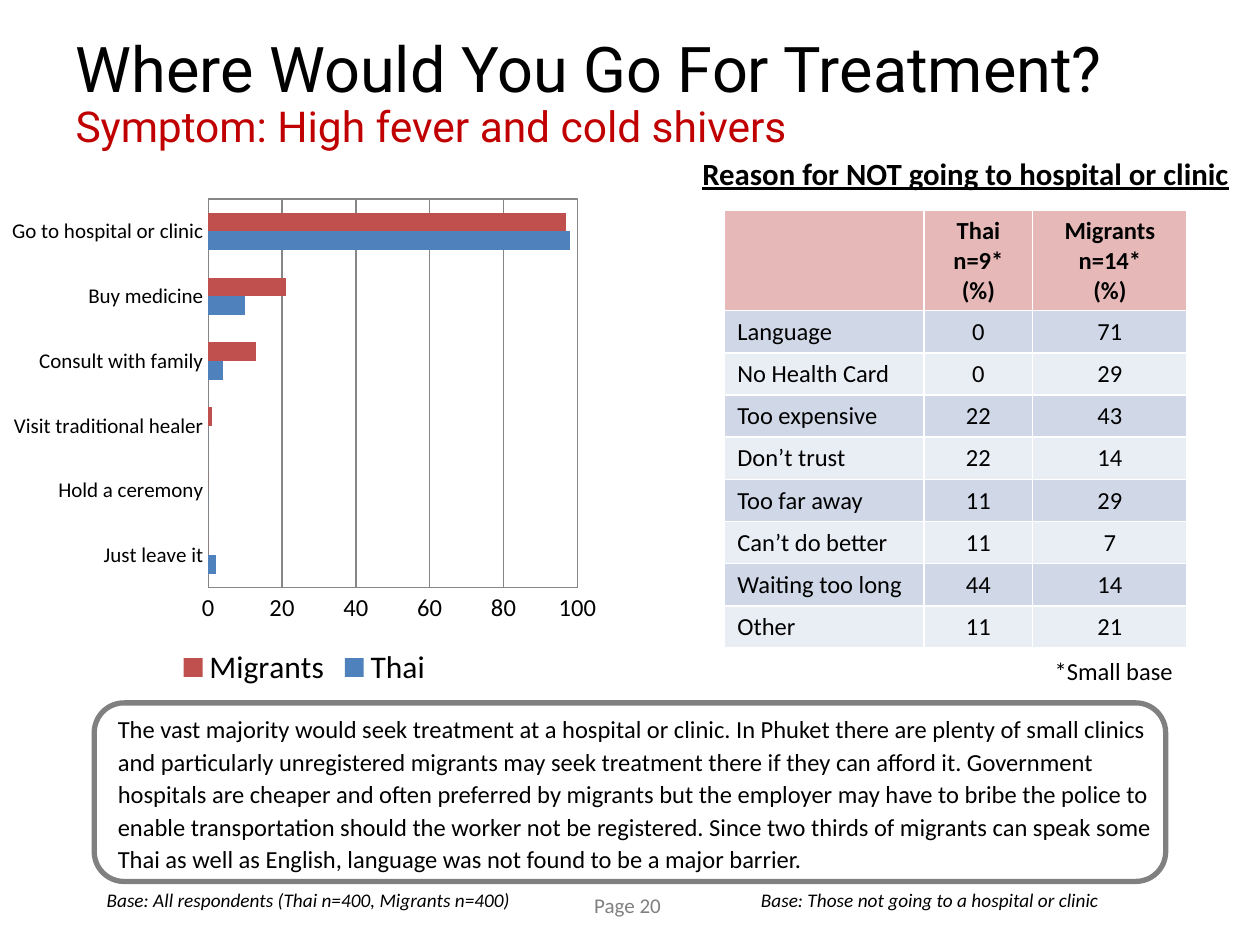
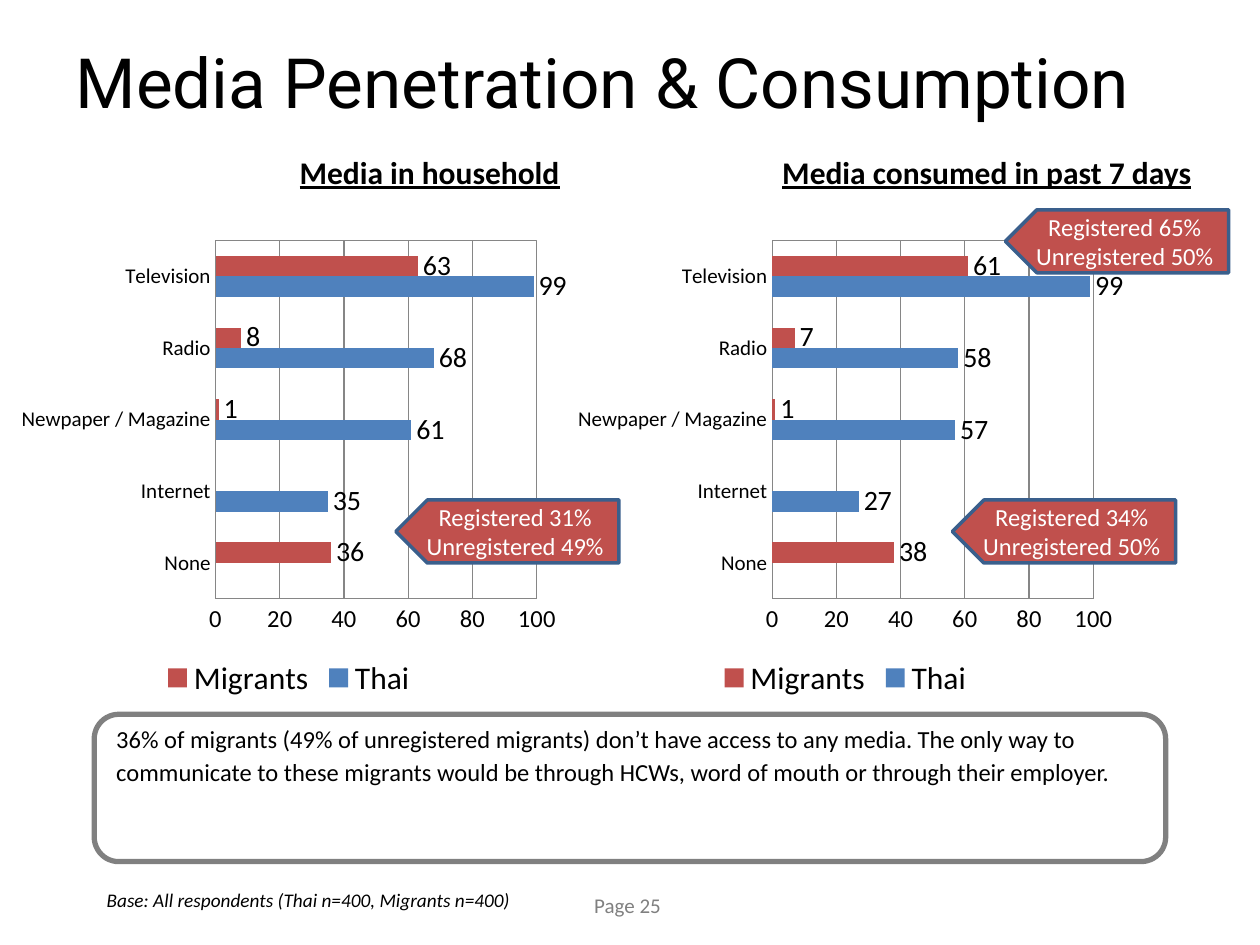
from pptx import Presentation
from pptx.chart.data import CategoryChartData
from pptx.dml.color import RGBColor
from pptx.enum.chart import XL_CHART_TYPE as ChartType, XL_LEGEND_POSITION as LegendPlace
from pptx.enum.chart import XL_TICK_MARK as TickMark
from pptx.enum.shapes import MSO_SHAPE as Preset
from pptx.enum.text import MSO_ANCHOR as Anchor, MSO_AUTO_SIZE as AutoSize, PP_ALIGN as Align
from pptx.oxml import parse_xml
from pptx.oxml.ns import nsdecls
from pptx.util import Cm, Pt

BLACK = RGBColor(0x00, 0x00, 0x00)
WHITE = RGBColor(0xFF, 0xFF, 0xFF)
GREY = RGBColor(0x80, 0x80, 0x80)
GRID = RGBColor(0x86, 0x86, 0x86)
DARK_RED = RGBColor(0xC0, 0x00, 0x00)
MIGRANT_RED = RGBColor(0xC0, 0x50, 0x4D)
CALLOUT_EDGE = RGBColor(0x3A, 0x5F, 0x8C)
HEADER_PINK = RGBColor(0xE6, 0xB9, 0xB8)
BANDS = [RGBColor(0xD0, 0xD8, 0xE8), RGBColor(0xE9, 0xED, 0xF4)]

BODY = {"name": "Calibri", "size": Pt(14), "color": BLACK}
TITLE = {"name": "Roboto", "size": Pt(36), "color": BLACK}
HEADING = BODY | {"size": Pt(18), "bold": True, "underline": True}
NOTE = BODY | {"size": Pt(11), "italic": True}
PAGE_NUMBER = BODY | {"size": Pt(12), "color": GREY}
ALL_RESPONDENTS = "Base: All respondents (Thai n=400, Migrants n=400)"


def apply_format(font, formats):
    for name, value in formats.items():
        if name == "color":
            font.color.rgb = value
        else:
            setattr(font, name, value)


def place(lengths):
    return [Cm(length) for length in lengths]


class SurveyDeck:
    def __init__(self):
        self.deck = Presentation()
        self.deck.slide_width, self.deck.slide_height = Cm(25.4), Cm(19.05)
        self.page = None

    def add_page(self, number):
        self.page = self.deck.slides.add_slide(self.deck.slide_layouts[5])
        self.text(f"Page {number}", (11.73, 17.86, 1.96, 0.76), PAGE_NUMBER)
        self.text(ALL_RESPONDENTS, (1.9, 17.78, 8.81, 0.74), NOTE)

    def add_lines(self, frame, lines, formats, align=Align.LEFT):
        for index, line in enumerate(lines):
            para = frame.paragraphs[0] if index == 0 else frame.add_paragraph()
            para.alignment = align
            span = para.add_run()
            span.text = line
            apply_format(span.font, formats)

    def title(self, text, height, size, subtitle=None):
        box = self.page.shapes.title
        box.left, box.top, box.width, box.height = place((1.27, 0.64, 22.86, height))
        frame = box.text_frame
        frame.auto_size = AutoSize.NONE
        frame.vertical_anchor = Anchor.MIDDLE
        self.add_lines(frame, [text], TITLE | {"size": Pt(size)})
        if subtitle:
            para = frame.paragraphs[0]
            para.line_spacing = 0.9
            para.add_line_break()
            span = para.add_run()
            span.text = subtitle
            apply_format(span.font, TITLE | {"size": Pt(24.3), "color": DARK_RED})

    def text(self, text, area, formats, align=Align.LEFT, wrap=False):
        frame = self.page.shapes.add_textbox(*place(area)).text_frame
        frame.word_wrap = wrap
        if wrap:
            frame.vertical_anchor = Anchor.MIDDLE
        self.add_lines(frame, [text], formats, align)

    def outline(self, shape, color, width):
        shape.shadow.inherit = False
        shape.line.color.rgb = color
        shape.line.width = Pt(width)

    def summary(self, text, top, height):
        box = self.page.shapes.add_shape(
            Preset.ROUNDED_RECTANGLE, *place((1.9, top, 21.6, height)))
        self.outline(box, GREY, 3)
        box.fill.background()
        frame = box.text_frame
        frame.word_wrap = True
        frame.vertical_anchor = Anchor.TOP
        for side in ("left", "top", "right", "bottom"):
            setattr(frame, f"margin_{side}", 0)
        self.add_lines(frame, [text], BODY)
        para = frame.paragraphs[0]
        para.line_spacing = 1.1
        para._p.get_or_add_pPr().set("marL", str(Cm(0.3)))

    def callout(self, registered, unregistered, left, top):
        arrow = self.page.shapes.add_shape(
            Preset.PENTAGON, *place((left, top, 4.5, 1.27)))
        self.outline(arrow, CALLOUT_EDGE, 2)
        arrow.fill.solid()
        arrow.fill.fore_color.rgb = MIGRANT_RED
        arrow._element.spPr.xfrm.set("flipH", "1")
        arrow.text_frame.vertical_anchor = Anchor.MIDDLE
        lines = [f"Registered {registered}%", f"Unregistered {unregistered}%"]
        self.add_lines(arrow.text_frame, lines, BODY | {"color": WHITE}, Align.CENTER)

    def bar_chart(self, categories, thai, migrants, area, labels=False):
        data = CategoryChartData()
        data.categories = categories
        data.add_series("Thai", thai)
        data.add_series("Migrants", migrants)
        chart = self.page.shapes.add_chart(
            ChartType.BAR_CLUSTERED, *place(area), data).chart
        apply_format(chart.font, BODY | {"size": Pt(18)})
        chart.has_title = False
        chart.has_legend = True
        chart.legend.position = LegendPlace.BOTTOM
        chart.legend.include_in_layout = False

        plot = chart.plots[0]
        plot.gap_width = 150
        plot.vary_by_categories = False
        migrant_fill = plot.series[1].format.fill
        migrant_fill.solid()
        migrant_fill.fore_color.rgb = MIGRANT_RED
        if labels:
            plot.has_data_labels = True
            plot.data_labels.show_value = True
            apply_format(plot.data_labels.font, BODY | {"size": Pt(16)})

        for axis, size in ((chart.category_axis, 12), (chart.value_axis, 14)):
            axis.major_tick_mark = axis.minor_tick_mark = TickMark.NONE
            axis.format.line.color.rgb = GRID
            apply_format(axis.tick_labels.font, BODY | {"size": Pt(size)})
        scale = {"minimum_scale": 0, "maximum_scale": 100, "major_unit": 20,
                 "has_major_gridlines": True}
        for name, value in scale.items():
            setattr(chart.value_axis, name, value)
        chart.value_axis.major_gridlines.format.line.color.rgb = GRID
        chart.element.chart.plotArea.append(parse_xml(
            f'<c:spPr {nsdecls("c", "a")}><a:noFill/><a:ln w="9525"><a:solidFill>'
            f'<a:srgbClr val="{GRID}"/></a:solidFill></a:ln></c:spPr>'))

    def cell(self, cell, lines, fill, formats, align):
        cell.fill.solid()
        cell.fill.fore_color.rgb = fill
        self.add_lines(cell.text_frame, lines, formats, align)

    def table(self, header, rows, widths, area):
        table = self.page.shapes.add_table(
            len(rows) + 1, len(header), *place(area)).table
        for column, width in zip(table.columns, widths):
            column.width = Cm(width)
        for index, row in enumerate(table.rows):
            row.height = Cm(0.85 if index else 2.03)
        for column, lines in enumerate(header):
            self.cell(table.cell(0, column), lines, HEADER_PINK,
                      BODY | {"bold": True}, Align.CENTER)
        for index, values in enumerate(rows):
            for column, value in enumerate(values):
                self.cell(table.cell(index + 1, column), [str(value)], BANDS[index % 2],
                          BODY, Align.CENTER if column else Align.LEFT)


def build_treatment(survey):
    survey.add_page(20)
    survey.title("Where Would You Go For Treatment?", 2.54, 36,
                 "Symptom: High fever and cold shivers")
    survey.summary(
        "The vast majority would seek treatment at a hospital or clinic. In Phuket there are "
        "plenty of small clinics and particularly unregistered migrants may seek treatment "
        "there if they can afford it. Government hospitals are cheaper and often preferred by "
        "migrants but the employer may have to bribe the police to enable transportation "
        "should the worker not be registered. Since two thirds of migrants can speak some "
        "Thai as well as English, language was not found to be a major barrier.", 14.17, 3.6)
    survey.bar_chart(
        ["Just leave it", "Hold a ceremony", "Visit traditional healer",
         "Consult with family", "Buy medicine", "Go to hospital or clinic"],
        [2, 0, 0, 4, 10, 98], [0, 0, 1, 13, 21, 97], (0, 3.81, 12.27, 10.16))
    survey.table(
        [[], ["Thai", "n=9* (%)"], ["Migrants", "n=14*", "(%)"]],
        [("Language", 0, 71), ("No Health Card", 0, 29), ("Too expensive", 22, 43),
         ("Don’t trust", 22, 14), ("Too far away", 11, 29), ("Can’t do better", 11, 7),
         ("Waiting too long", 44, 14), ("Other", 11, 21)],
        (4.02, 2.19, 3.11), (14.61, 4.23, 9.32, 8.83))
    survey.text("*Small base", (21.01, 13.11, 2.92, 0.86), BODY)
    survey.text("Reason for NOT going to hospital or clinic", (13.54, 2.96, 11.86, 1.06),
                HEADING | {"size": Pt(17.6)}, Align.CENTER, wrap=True)
    survey.text("Base: Those not going to a hospital or clinic",
                (15.09, 17.78, 7.37, 0.74), NOTE)


def build_media(survey):
    survey.add_page(25)
    survey.title("Media Penetration & Consumption", 1.98, 39.6)
    survey.summary(
        "36% of migrants (49% of unregistered migrants) don’t have access to any media. The "
        "only way to communicate to these migrants would be through HCWs, word of mouth or "
        "through their employer.", 14.4, 2.97)
    media = ["None", "Internet", "Newpaper / Magazine", "Radio", "Television"]
    panels = [
        ("Media in household", 5.79, 5.79, 0.21,
         [None, 35, 61, 68, 99], [36, None, 1, 8, 63]),
        ("Media consumed in past 7 days", 15.52, 8.84, 11.43,
         [None, 27, 57, 58, 99], [38, None, 1, 7, 61]),
    ]
    for heading, heading_left, width, chart_left, thai, migrants in panels:
        survey.bar_chart(media, thai, migrants, (chart_left, 4.66, 11.22, 9.52), labels=True)
        survey.text(heading, (heading_left, 2.96, width, 1.02), HEADING)
    for registered, unregistered, left, top in (
            (31, 49, 7.98, 10.08), (34, 50, 19.2, 10.08), (65, 50, 20.27, 4.23)):
        survey.callout(registered, unregistered, left, top)


def main():
    survey = SurveyDeck()
    build_treatment(survey)
    build_media(survey)
    survey.deck.save("out.pptx")


if __name__ == "__main__":
    main()
